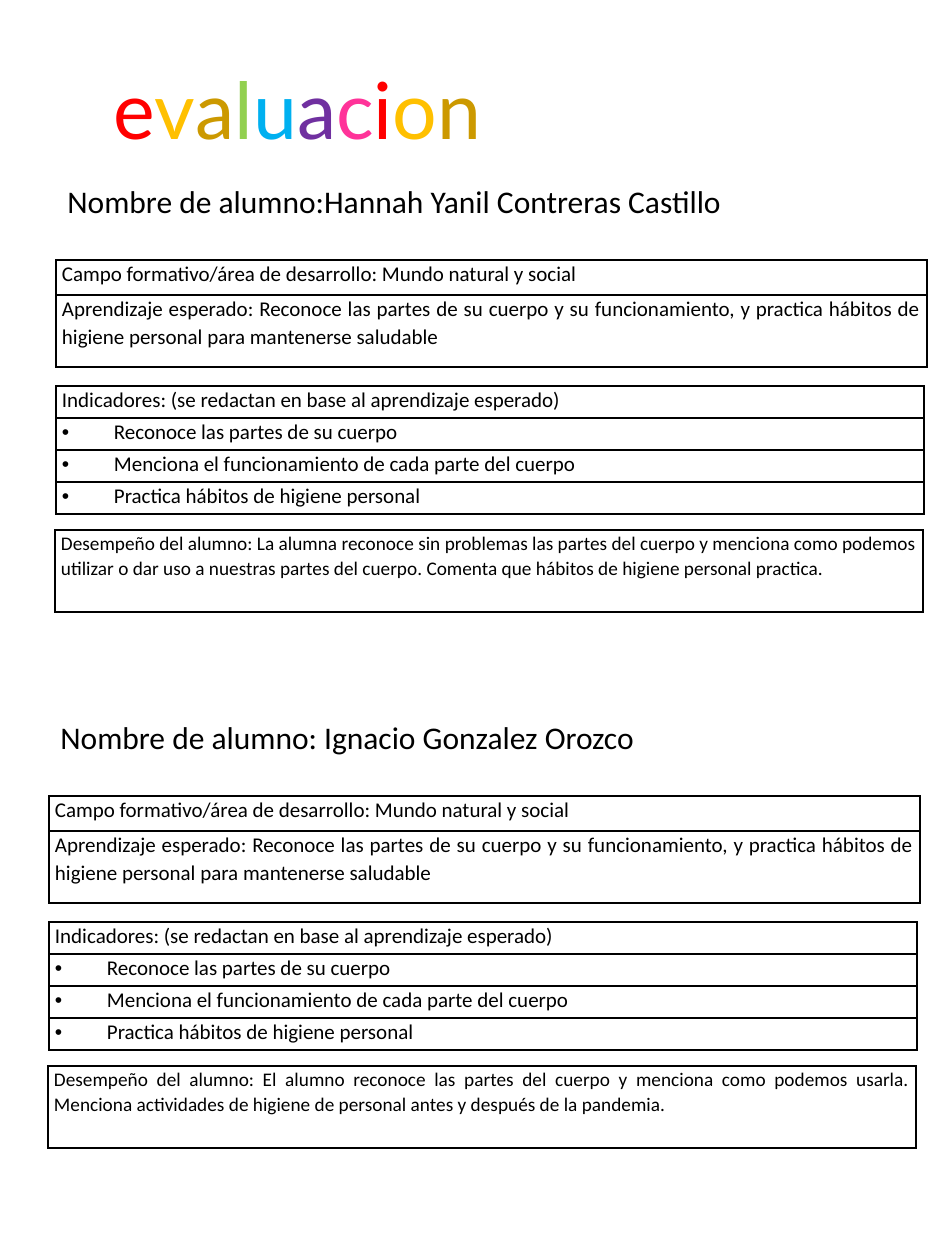
from dataclasses import dataclass
from itertools import cycle

from lxml.etree import SubElement
from pptx import Presentation
from pptx.dml.color import RGBColor
from pptx.enum.text import MSO_AUTO_SIZE as AutoSize, PP_ALIGN as Align
from pptx.oxml import parse_xml
from pptx.oxml.ns import nsdecls, qn
from pptx.util import Emu, Pt

PX_PER_INCH = 126
BLACK = "000000"
RAINBOW = ["FF0000", "FFC000", "CC9900", "92D050", "00B0F0", "7030A0", "FF3399"]
BULLET_INDENT = 52

FIELD = [
    "Campo formativo/área de desarrollo: Mundo natural y social",
    "Aprendizaje esperado: Reconoce las partes de su cuerpo y su funcionamiento, "
    "y practica hábitos de higiene personal para mantenerse saludable",
]
INDICATORS = [
    "Indicadores: (se redactan en base al aprendizaje esperado)",
    "Reconoce las partes de su cuerpo",
    "Menciona el funcionamiento de cada parte del cuerpo",
    "Practica hábitos de higiene personal",
]


@dataclass
class Grid:
    """A one-column table; rows from first_bullet on are bulleted."""
    left: int
    top: int
    width: int
    heights: list[int]
    texts: list[str]
    size: int = 12
    first_bullet: int | None = None


@dataclass
class Evaluation:
    left: int
    top: int
    heading_width: int
    heading: str
    performance: str


EVALUATIONS = [
    Evaluation(
        55, 176, 687, "Nombre de alumno:Hannah Yanil Contreras Castillo",
        "Desempeño del alumno: La alumna reconoce sin problemas las partes del cuerpo "
        "y menciona como podemos utilizar o dar uso a nuestras partes del cuerpo. "
        "Comenta que hábitos de higiene personal practica. "),
    Evaluation(
        48, 712, 606, "Nombre de alumno: Ignacio Gonzalez Orozco",
        "Desempeño del alumno: El alumno reconoce las partes del cuerpo y menciona "
        "como podemos usarla. Menciona actividades de higiene de personal antes y "
        "después de la pandemia."),
]


def px(length: int) -> Emu:
    return Emu(round(length * 914400 / PX_PER_INCH))


def rgb(color: str) -> RGBColor:
    return RGBColor.from_string(color)


def set_font(font, name: str, size: int, color: str | None = None) -> None:
    font.name, font.size = name, Pt(size)
    if color:
        font.color.rgb = rgb(color)


def add_text_box(page, left: int, top: int, width: int, height: int, wrap: bool):
    """Add a growing text box and return its first paragraph."""
    frame = page.shapes.add_textbox(px(left), px(top), px(width), px(height)).text_frame
    frame.word_wrap = wrap
    frame.auto_size = AutoSize.SHAPE_TO_FIT_TEXT
    return frame.paragraphs[0]


def add_borders(cell) -> None:
    properties = cell._tc.get_or_add_tcPr()
    for side in ("lnL", "lnR", "lnT", "lnB"):
        properties.append(parse_xml(
            f'<a:{side} {nsdecls("a")} w="{Pt(1)}"><a:solidFill>'
            f'<a:srgbClr val="{BLACK}"/></a:solidFill></a:{side}>'))


def add_bullet(para) -> None:
    properties = para._p.get_or_add_pPr()
    properties.set("marL", str(px(BULLET_INDENT)))
    properties.set("indent", str(-px(BULLET_INDENT)))
    SubElement(properties, qn("a:buFont"), typeface="Arial")
    SubElement(properties, qn("a:buChar"), char="•")


def add_grid(page, grid: Grid) -> None:
    table = page.shapes.add_table(
        len(grid.texts), 1, px(grid.left), px(grid.top),
        px(grid.width), px(sum(grid.heights))).table
    table.first_row = table.horz_banding = False
    for index, (height, text) in enumerate(zip(grid.heights, grid.texts)):
        table.rows[index].height = px(height)
        cell = table.cell(index, 0)
        cell.margin_left = cell.margin_right = px(6)
        cell.margin_top = cell.margin_bottom = 0
        add_borders(cell)
        cell.fill.background()
        para = cell.text_frame.paragraphs[0]
        para.text = text
        para.alignment = Align.JUSTIFY
        para.line_spacing = 1.07
        if grid.first_bullet is not None and index >= grid.first_bullet:
            add_bullet(para)
        set_font(para.font, "Calibri", grid.size, BLACK)


def add_title(page, text: str) -> None:
    para = add_text_box(page, 101, 55, 844, 108, wrap=True)
    for letter, color in zip(text, cycle(RAINBOW)):
        span = para.add_run()
        span.text = letter
        span.font.color.rgb = rgb(color)
    set_font(para.font, "Lato", 45)


def add_evaluation(page, item: Evaluation) -> None:
    left, top = item.left, item.top
    add_grid(page, Grid(left + 1, top + 84, 871, [35, 72], FIELD))
    add_grid(page, Grid(left + 1, top + 210, 868, [32] * 4, INDICATORS, first_bullet=1))
    add_grid(page, Grid(left, top + 354, 868, [82], [item.performance], size=11))
    para = add_text_box(page, left, top, item.heading_width, 51, wrap=False)
    para.text = item.heading
    set_font(para.font, "Calibri", 18, BLACK)


def main() -> None:
    deck = Presentation()
    deck.slide_width, deck.slide_height = px(945), px(1260)
    page = deck.slides.add_slide(deck.slide_layouts[6])
    add_title(page, "evaluacion")
    for item in EVALUATIONS:
        add_evaluation(page, item)
    deck.save("out.pptx")


if __name__ == "__main__":
    main()
